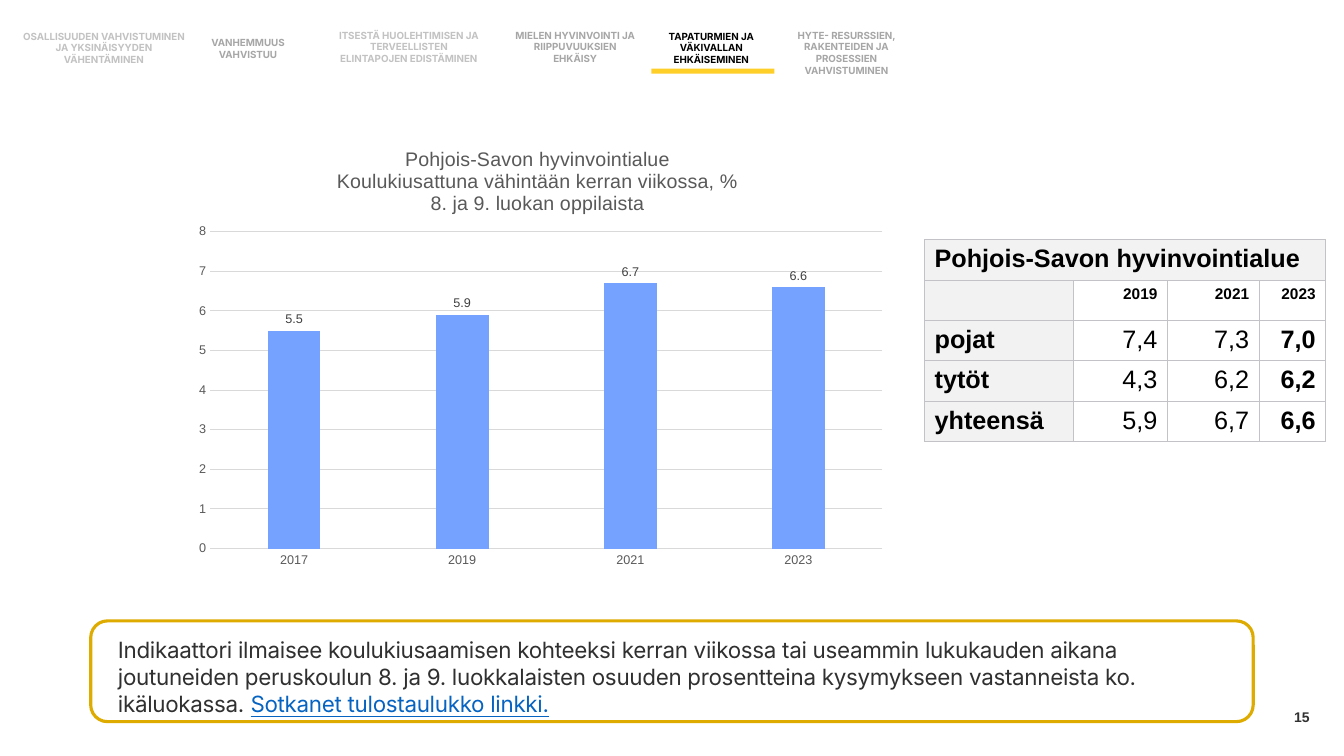
from lxml import etree
from pptx import Presentation
from pptx import util as u
from pptx.chart.data import CategoryChartData
from pptx.dml.color import RGBColor
from pptx.enum import chart as charts, shapes, text
from pptx.oxml import parse_xml
from pptx.oxml.ns import nsdecls, qn

Inches, Pt = u.Inches, u.Pt
RIGHT, CENTER, LEFT = text.PP_ALIGN.RIGHT, text.PP_ALIGN.CENTER, text.PP_ALIGN.LEFT


def style(font, size, color, name="Arial", bold=False):
    font.size, font.name, font.bold = Pt(size), name, bold
    font.color.rgb = RGBColor.from_string(color)


def add_text(left, top, width, height, lines, align, anchor, **look):
    box = page.shapes.add_textbox(Inches(left), Inches(top), Inches(width), Inches(height))
    frame = box.text_frame
    frame.word_wrap = True
    frame.vertical_anchor = anchor
    frame.margin_left = frame.margin_right = frame.margin_top = frame.margin_bottom = 0
    frame.text = lines
    for para in frame.paragraphs:
        para.alignment = align
        style(para.font, **look)
    return frame


deck = Presentation()
deck.slide_width, deck.slide_height = Inches(13.33), Inches(7.5)
page = deck.slides.add_slide(deck.slide_layouts[6])
middle = text.MSO_ANCHOR.MIDDLE

# Page number
add_text(9.99, 6.91, 3, 0.4, "15", RIGHT, middle, size=10, color="313131", bold=True)

# Theme headings along the top
themes = [
    (0.22, 0.3, 1.62, 0.35, "C2C2C2", "OSALLISUUDEN VAHVISTUMINEN JA YKSINÄISYYDEN VÄHENTÄMINEN"),
    (1.85, 0.36, 1.22, 0.24, "A6A6A6", "VANHEMMUUS VAHVISTUU"),
    (3.35, 0.29, 1.41, 0.35, "C2C2C2", "ITSESTÄ HUOLEHTIMISEN JA TERVEELLISTEN ELINTAPOJEN EDISTÄMINEN"),
    (5.07, 0.29, 1.27, 0.35, "A6A6A6", "MIELEN HYVINVOINTI JA RIIPPUVUUKSIEN EHKÄISY"),
    (6.42, 0.3, 1.27, 0.35, "000000", "TAPATURMIEN JA VÄKIVALLAN EHKÄISEMINEN"),
    (7.69, 0.29, 1.41, 0.47, "A6A6A6", "HYTE- RESURSSIEN, RAKENTEIDEN JA PROSESSIEN\nVAHVISTUMINEN"),
]
for left, top, width, height, color, words in themes:
    add_text(left, top, width, height, words, CENTER, middle,
             size=7, color=color, name="Inter", bold=True)

# Marker under the current theme
marker = page.shapes.add_shape(shapes.MSO_SHAPE.RECTANGLE, Inches(6.46), Inches(0.68), Inches(1.22), Inches(0.05))
marker.shadow.inherit = False
marker.fill.solid()
marker.fill.fore_color.rgb = RGBColor.from_string("FFCF29")
marker.line.fill.background()

# Explanation with its frame
frame = add_text(1.17, 6.31, 10.96, 1.13,
                 "Indikaattori ilmaisee koulukiusaamisen kohteeksi kerran viikossa tai useammin lukukauden "
                 "aikana joutuneiden peruskoulun 8. ja 9. luokkalaisten osuuden prosentteina kysymykseen "
                 "vastanneista ko. ikäluokassa. ", LEFT, text.MSO_ANCHOR.TOP,
                 size=16, color="303030", name="Inter")
para = frame.paragraphs[0]
source = para.add_run()
source.text = "Sotkanet tulostaulukko linkki."
source.font.underline = True
source.font.color.rgb = RGBColor.from_string("0563C1")
for span in para.runs:
    span.font._element.set("spc", "-20")

border = page.shapes.add_shape(shapes.MSO_SHAPE.ROUNDED_RECTANGLE, Inches(0.9), Inches(6.16), Inches(11.53), Inches(1))
border.shadow.inherit = False
border.fill.background()
border.line.color.rgb = RGBColor.from_string("DEAC00")
border.line.width = Pt(2.25)

# Column chart
data = CategoryChartData()
data.categories = ["2017", "2019", "2021", "2023"]
data.add_series("Series 1", (5.5, 5.9, 6.7, 6.6))
chart = page.shapes.add_chart(charts.XL_CHART_TYPE.COLUMN_CLUSTERED, Inches(1.83), Inches(1.24),
                              Inches(7.05), Inches(4.49), data).chart
style(chart.font, 10, "000000")
chart.has_legend = False
chart.has_title = True
title = chart.chart_title
title.include_in_layout = False
title.text_frame.text = ("Pohjois-Savon hyvinvointialue\nKoulukiusattuna vähintään kerran viikossa, %\n"
                         "8. ja 9. luokan oppilaista")
for para in title.text_frame.paragraphs:
    para.alignment = CENTER
    style(para.font, 14, "595959")

for axis in (chart.category_axis, chart.value_axis):
    style(axis.tick_labels.font, 9, "595959")
    axis.major_tick_mark = axis.minor_tick_mark = charts.XL_TICK_MARK.NONE
chart.value_axis.minimum_scale, chart.value_axis.maximum_scale = 0, 8
chart.value_axis.major_unit = 1
chart.value_axis.format.line.fill.background()
for line in (chart.category_axis.format.line, chart.value_axis.major_gridlines.format.line):
    line.color.rgb = RGBColor.from_string("D9D9D9")
    line.width = Pt(0.75)

plot = chart.plots[0]
plot.gap_width, plot.overlap, plot.vary_by_categories = 219, -27, False
columns = plot.series[0]
columns.format.fill.solid()
columns.format.fill.fore_color.rgb = RGBColor.from_string("75A1FF")
labels = columns.data_labels
labels.show_value = True
labels.position = charts.XL_LABEL_POSITION.OUTSIDE_END
style(labels.font, 9, "404040")

# Fixed places for the title and the plot area
for owner, places in (
    (title._element, {"xMode": "edge", "yMode": "edge", "x": 0.21, "y": 0.04}),
    (chart._chartSpace.chart.plotArea, {"layoutTarget": "inner", "xMode": "edge", "yMode": "edge",
                                        "x": 0.036, "y": 0.236, "w": 0.946, "h": 0.7}),
):
    layout = owner.find(qn("c:layout"))
    if layout is None:
        layout = etree.Element(qn("c:layout"))
        previous = owner.find(qn("c:tx"))
        owner.insert(0 if previous is None else owner.index(previous) + 1, layout)
    manual = etree.SubElement(layout, qn("c:manualLayout"))
    for key, value in places.items():
        etree.SubElement(manual, qn("c:" + key)).set("val", str(value))

# Table of boys, girls and total
rows = [
    ["Pohjois-Savon hyvinvointialue", "", "", ""],
    ["", "2019", "2021", "2023"],
    ["pojat", "7,4", "7,3", "7,0"],
    ["tytöt", "4,3", "6,2", "6,2"],
    ["yhteensä", "5,9", "6,7", "6,6"],
]
table = page.shapes.add_table(5, 4, Inches(9.17), Inches(2.38), Inches(3.98), Inches(2)).table
table.first_row = table.horz_banding = False
for column, width in zip(table.columns, (1.48, 0.93, 0.91, 0.66)):
    column.width = Inches(width)
for r, words in enumerate(rows):
    table.rows[r].height = Inches(0.4)
    for c, word in enumerate(words):
        cell = table.cell(r, c)
        cell.fill.solid()
        cell.fill.fore_color.rgb = RGBColor.from_string("F2F2F2" if r == 0 or c == 0 else "FFFFFF")
        cell.text = word
        para = cell.text_frame.paragraphs[0]
        para.alignment = RIGHT if c else LEFT
        style(para.font, 11 if r == 1 else 18, "000000", bold=r < 2 or c in (0, 3))
        for place, side in enumerate(("lnL", "lnR", "lnT", "lnB")):
            cell._tc.get_or_add_tcPr().insert(place, parse_xml(
                f'<a:{side} {nsdecls("a")} w="9525"><a:solidFill><a:srgbClr val="C3C2C6"/>'
                f'</a:solidFill></a:{side}>'))
table.cell(0, 0).merge(table.cell(0, 3))

deck.save("out.pptx")
